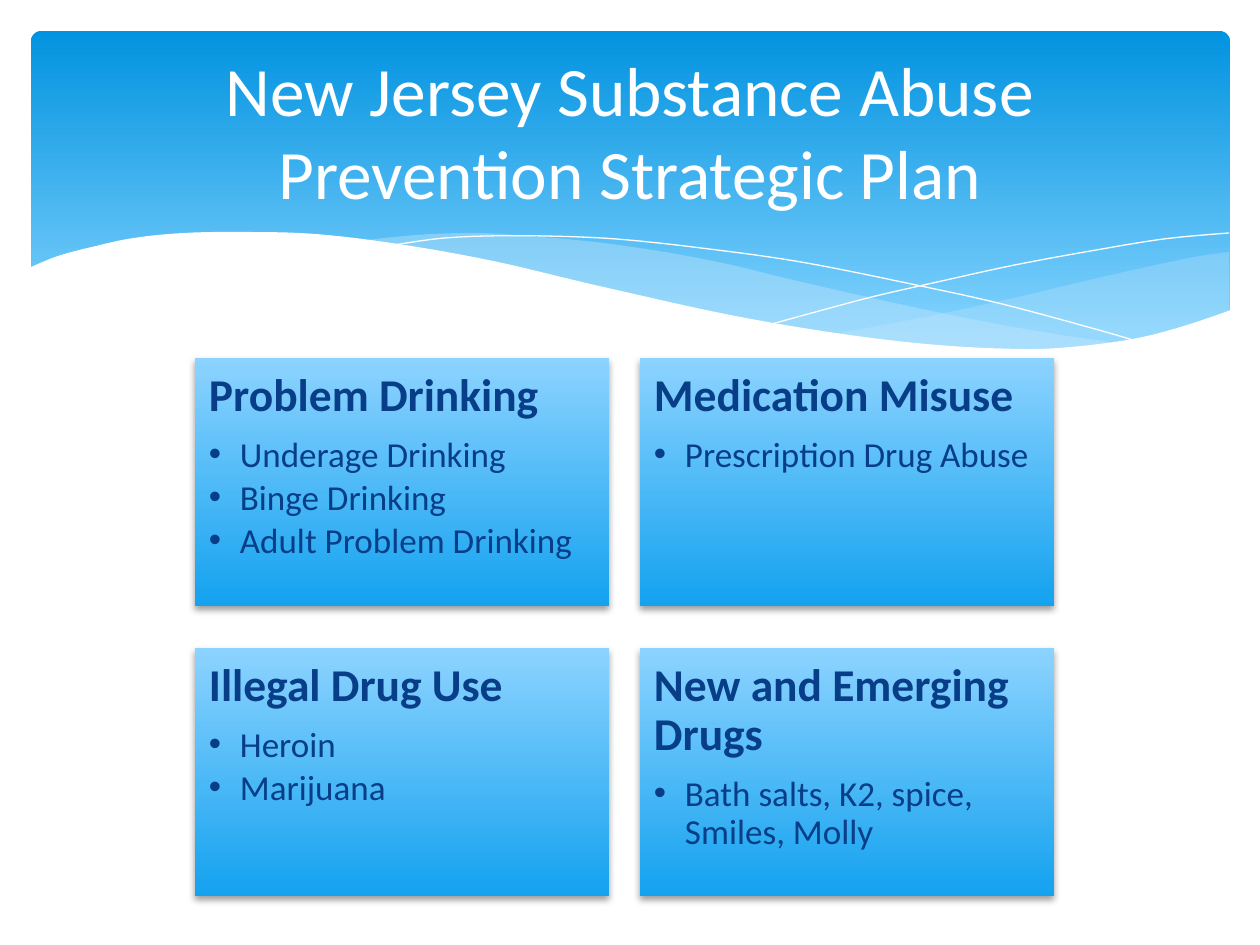
from lxml import etree
from pptx import Presentation
from pptx.dml.color import RGBColor
from pptx.enum import shapes, text
from pptx.oxml import ns
from pptx.util import Pt

PX = 914400 / 126
FONT = "Calibri"
WHITE, NAVY, MIST = "FFFFFF", "073E87", "C6E7FC"

TITLE = "New Jersey Substance Abuse Prevention Strategic Plan"
CARDS = [
    ("Problem Drinking",
     ["Underage Drinking", "Binge Drinking", "Adult Problem Drinking"]),
    ("Medication Misuse", ["Prescription Drug Abuse"]),
    ("Illegal Drug Use", ["Heroin", "Marijuana"]),
    ("New and Emerging Drugs", ["Bath salts, K2, spice, Smiles, Molly"]),
]
LEFT, TOP, WIDE, HIGH = 195, 358, 414, 248
STEP_X, STEP_Y = 445, 290

BANDS = [
    (29,
     [(1229, 252), (1194, 257), (1142, 268), (1085, 281), (1014, 298),
      (949, 312), (889, 324), (833, 334)],
     [(833, 334), (888, 342), (938, 347), (984, 349), (1038, 350),
      (1088, 347), (1130, 340), (1169, 331), (1196, 324), (1229, 311)]),
    (40,
     [(1125, 344), (1055, 334), (976, 320), (890, 302), (793, 280),
      (736, 266), (682, 255), (632, 247), (586, 241), (529, 236),
      (479, 233), (433, 234), (394, 237), (360, 241)],
     [(360, 241), (431, 251), (509, 266), (566, 280), (668, 302),
      (757, 321), (838, 335), (910, 343), (974, 348), (1031, 350),
      (1081, 349), (1125, 344)]),
]
STRANDS = [
    [(389, 246), (413, 242), (445, 238), (487, 236), (545, 236), (616, 239),
     (701, 248), (801, 262), (916, 285), (1002, 304), (1095, 329), (1143, 343)],
    [(772, 324), (823, 310), (876, 296), (942, 281), (1015, 265),
     (1091, 251), (1164, 239), (1229, 233)],
]
HILL = [(1231, 310), (1184, 326), (1133, 339), (1071, 347), (1019, 349),
        (937, 345), (842, 334), (730, 315), (599, 286), (493, 261),
        (398, 244), (315, 234), (243, 232), (184, 233), (134, 238),
        (96, 246), (58, 256), (29, 268)]
BASE = [(29, 415), (1231, 415)]


def px(n):
    return round(n * PX)


def color(code):
    return RGBColor.from_string(code)


def add(node, tag, **attrs):
    child = etree.SubElement(node, ns.qn(tag))
    for key, val in attrs.items():
        child.set(key, str(val))
    return child


def smooth(pts, steps=6):
    ends = [pts[0], *pts, pts[-1]]
    out = [pts[0]]
    for a, b, c, d in zip(ends, ends[1:], ends[2:], ends[3:]):
        for i in range(1, steps + 1):
            t = i / steps
            out.append(tuple(
                (2 * q + (r - p) * t + (2 * p - 5 * q + 4 * r - s) * t ** 2
                 + (3 * q - p - 3 * r + s) * t ** 3) / 2
                for p, q, r, s in zip(a, b, c, d)))
    return out


def trace(slide, pts, close):
    first, *rest = [(px(x), px(y)) for x, y in pts]
    pen = slide.shapes.build_freeform(*first, scale=1.0)
    pen.add_line_segments(rest, close=close)
    shape = pen.convert_to_shape()
    shape.shadow.inherit = False
    return shape


def area(slide, pts, code, alpha=100):
    shape = trace(slide, pts, True)
    shape.line.fill.background()
    shape.fill.solid()
    shape.fill.fore_color.rgb = color(code)
    if alpha < 100:
        tint = next(shape.element.spPr.iter(ns.qn("a:srgbClr")))
        add(tint, "a:alpha", val=alpha * 1000)


def strand(slide, pts):
    shape = trace(slide, smooth(pts), False)
    shape.fill.background()
    shape.line.color.rgb = color(WHITE)
    shape.line.width = Pt(0)


def panel(slide, kind, box, stops):
    shape = slide.shapes.add_shape(kind, *map(px, box))
    shape.shadow.inherit = False
    shape.line.fill.background()
    shape.fill.gradient()
    shape.fill.gradient_angle = 270
    for stop, (pos, code) in zip(shape.fill.gradient_stops, stops):
        stop.position = pos
        stop.color.rgb = color(code)
    return shape


def style(para, size, code, bold=False):
    for run in para.runs:
        run.font.name = FONT
        run.font.size = Pt(size)
        run.font.bold = bold
        run.font.color.rgb = color(code)


def card(slide, box, head, items):
    shape = panel(slide, shapes.MSO_SHAPE.RECTANGLE, box,
                  [(0, "8CD3FF"), (1, "14A2EF")])
    glow = add(shape.element.spPr.find(ns.qn("a:effectLst")), "a:outerShdw",
               blurRad=Pt(4), dist=Pt(2), dir=5400000, rotWithShape=0)
    add(add(glow, "a:srgbClr", val="000000"), "a:alpha", val=38000)
    frame = shape.text_frame
    frame.word_wrap = True
    frame.vertical_anchor = text.MSO_ANCHOR.TOP
    frame.margin_left = frame.margin_right = px(14)
    frame.margin_top = frame.margin_bottom = px(14)
    frame.text = "\n".join([head, *items])
    for i, para in enumerate(frame.paragraphs):
        para.alignment = text.PP_ALIGN.LEFT
        para.line_spacing = 0.9
        para.space_after = Pt(3 if i else 9)
        style(para, 20 if i else 26, NAVY, not i)
        if i:
            para.level = 1
            props = para._p.get_or_add_pPr()
            props.set("marL", str(px(31)))
            props.set("indent", str(px(-31)))
            add(props, "a:buFont", typeface="Arial")
            add(props, "a:buChar", char="•")


def banner(slide):
    back = panel(slide, shapes.MSO_SHAPE.ROUNDED_RECTANGLE,
                 (31, 31, 1199, 340), [(0, "0293E0"), (0.9, "83D3FE")])
    back.adjustments[0] = 0.03
    for alpha, upper, lower in BANDS:
        area(slide, smooth(upper) + smooth(lower), MIST, alpha)
    for pts in STRANDS:
        strand(slide, pts)
    area(slide, smooth(HILL) + BASE, WHITE)


def title(slide):
    frame = slide.shapes.add_textbox(*map(px, (63, 94, 1134, 146))).text_frame
    frame.word_wrap = True
    frame.vertical_anchor = text.MSO_ANCHOR.MIDDLE
    frame.margin_bottom = px(80)
    frame.text = TITLE
    para = frame.paragraphs[0]
    para.alignment = text.PP_ALIGN.CENTER
    style(para, 39.6, WHITE)


def main():
    deck = Presentation()
    deck.slide_width, deck.slide_height = px(1260), px(945)
    slide = deck.slides.add_slide(deck.slide_layouts[6])
    banner(slide)
    title(slide)
    for i, (head, items) in enumerate(CARDS):
        row, col = divmod(i, 2)
        box = (LEFT + col * STEP_X, TOP + row * STEP_Y, WIDE, HIGH)
        card(slide, box, head, items)
    deck.save("out.pptx")


if __name__ == "__main__":
    main()
